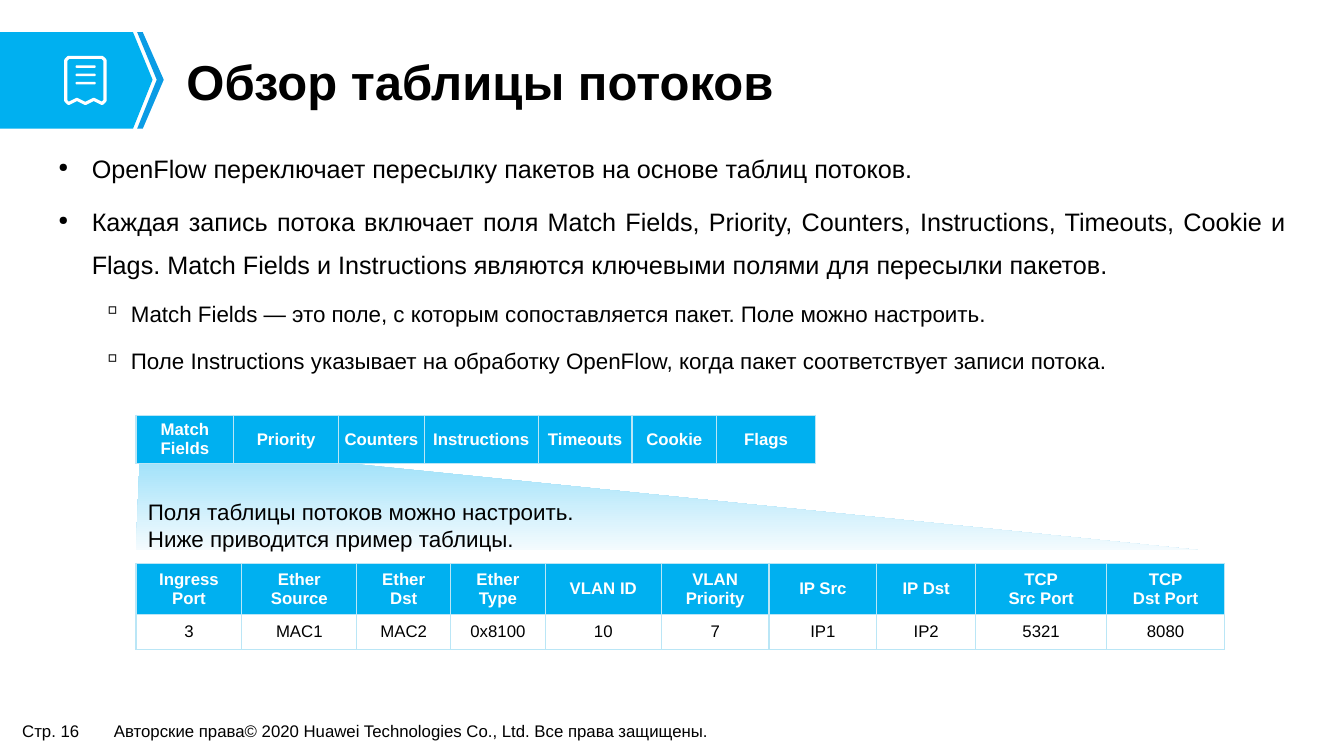
from lxml import etree
from pptx import Presentation
from pptx.dml.color import RGBColor
from pptx.enum.shapes import MSO_SHAPE
from pptx.enum.text import MSO_ANCHOR, PP_ALIGN
from pptx.oxml import parse_xml
from pptx.oxml.ns import qn
from pptx.util import Pt

CENTER, JUSTIFY, LEFT = PP_ALIGN.CENTER, PP_ALIGN.JUSTIFY, PP_ALIGN.LEFT
MIDDLE = MSO_ANCHOR.MIDDLE
ROUNDED = MSO_SHAPE.ROUNDED_RECTANGLE
BLUE, WHITE, BLACK, BORDER = "00B0F0", "FFFFFF", "000000", "BAE6F6"
NS = "http://schemas.openxmlformats.org/drawingml/2006/main"


def rgb(color):
    return RGBColor.from_string(color)


def write(tf, text, size=12, color=BLACK, bold=False, align=LEFT, line=None,
          before=0, bullet=None, bullet_size=100, indent=(0, 0), level=0):
    """Fill the first empty paragraph, or append; newlines split paragraphs."""
    for part in text.split("\n"):
        p = tf.paragraphs[0] if not tf.text else tf.add_paragraph()
        p.alignment, p.level = align, level
        p.space_before = Pt(before)
        if line:
            p.line_spacing = line
        if bullet:
            pPr = p._p.get_or_add_pPr()
            pPr.set("marL", str(Pt(indent[0])))
            pPr.set("indent", str(Pt(indent[1])))
            etree.SubElement(pPr, qn("a:buSzPct")).set("val", str(bullet_size * 1000))
            etree.SubElement(pPr, qn("a:buChar")).set("char", bullet)
        r = p.add_run()
        r.text = part
        r.font.name, r.font.size, r.font.bold = "Arial", Pt(size), bold
        r.font.color.rgb = rgb(color)


prs = Presentation()
prs.slide_width, prs.slide_height = Pt(960), Pt(540)
s = prs.slides.add_slide(prs.slide_layouts[5])

# Header arrow, receipt icon and the wedge between the two tables
arrow = [(0, 23), (95, 23), (108.7, 57.4), (95, 91.6), (0, 91.6)]
chevron = [(97.9, 23), (102.2, 23), (116.6, 57.4), (102.2, 91.6), (97.9, 91.6), (112.3, 57.4)]
receipt = [(47.2, 43), (49.2, 40.8), (72.8, 40.8), (74.8, 43), (74.8, 72.2), (73, 74),
           (67, 71), (61, 74), (55, 71), (49, 74), (47.2, 72.2)]
wedge = [(97.2, 393.1), (100.1, 324), (170.6, 322.6), (856.8, 393.1)]
for points, fill, outline in [(arrow, BLUE, None), (chevron, "0B9CE5", None),
                              (receipt, None, WHITE), (wedge, ("99DFF9", "F4FBFE"), None)]:
    builder = s.shapes.build_freeform(*points[0], scale=12700)
    builder.add_line_segments(points[1:], close=True)
    sp = builder.convert_to_shape()
    sp.shadow.inherit = False
    if isinstance(fill, tuple):
        sp.fill.gradient()
        sp.fill.gradient_angle = 270
        for stop, position, color in zip(sp.fill.gradient_stops, (0, 1), fill):
            stop.position, stop.color.rgb = position, rgb(color)
    elif fill:
        sp.fill.solid()
        sp.fill.fore_color.rgb = rgb(fill)
    else:
        sp.fill.background()
    if outline:
        sp.line.color.rgb, sp.line.width = rgb(outline), Pt(2.2)
    else:
        sp.line.fill.background()

for i in range(3):
    sp = s.shapes.add_shape(ROUNDED, Pt(54), Pt(46.7 + 5.9 * i), Pt(14.4), Pt(1.8))
    sp.adjustments[0] = 0.5
    sp.shadow.inherit = False
    sp.fill.solid()
    sp.fill.fore_color.rgb = rgb(WHITE)
    sp.line.fill.background()

# Tables: top, column widths, row heights, horizontal and vertical cell margins, rows
example = (402.5, [75.6, 82.1, 67, 67.7, 82.8, 77, 77, 70.6, 93.6, 84.2], [36.2, 25], 7.2, 3.6, [
    ["Ingress Port", "Ether Source", "Ether\nDst", "Ether\nType", "VLAN ID", "VLAN Priority",
     "IP Src", "IP Dst", "TCP\nSrc Port", "TCP\nDst Port"],
    ["3", "MAC1", "MAC2", "0x8100", "10", "7", "IP1", "IP2", "5321", "8080"]])
entry = (296.6, [69.8, 74.9, 61.2, 81.4, 67, 60.5, 70.6], [34.6], 2.9, 2.9, [
    ["Match Fields", "Priority", "Counters", "Instructions", "Timeouts", "Cookie", "Flags"]])
for top, widths, heights, margin_x, margin_y, rows in (example, entry):
    table = s.shapes.add_table(len(rows), len(widths), Pt(97.2), Pt(top),
                               Pt(sum(widths)), Pt(sum(heights))).table
    table.horz_banding = False
    for column, width in zip(table.columns, widths):
        column.width = Pt(width)
    for i, (height, row) in enumerate(zip(heights, rows)):
        table.rows[i].height = Pt(height)
        for j, text in enumerate(row):
            cell = table.cell(i, j)
            cell.vertical_anchor = MIDDLE
            cell.margin_left = cell.margin_right = Pt(margin_x)
            cell.margin_top = cell.margin_bottom = Pt(margin_y)
            for side in ("lnL", "lnR", "lnT", "lnB"):
                cell._tc.get_or_add_tcPr().append(parse_xml(
                    f'<a:{side} xmlns:a="{NS}" w="12700"><a:solidFill>'
                    f'<a:srgbClr val="{BORDER}"/></a:solidFill></a:{side}>'))
            cell.fill.solid()
            cell.fill.fore_color.rgb = rgb(WHITE if i else BLUE)
            write(cell.text_frame, text, color=BLACK if i else WHITE, bold=i == 0, align=CENTER)

# Text boxes: position, margins, wrapping, then paragraphs with their format
top_level = dict(size=18, align=JUSTIFY, line=1.4, bullet="●", bullet_size=50, indent=(23.8, -23.8))
sub_level = dict(size=16, line=1.4, before=7.2, bullet="▫", indent=(51.8, -20.2), level=1)
boxes = [
    ((9.4, 511.9, 55.4, 20.9), 6.5, 2.9, False, [("Стр. 16", {})]),
    ((74.9, 511.9, 457.9, 20.9), 6.5, 2.9, True, [
        ("Авторские права© 2020 Huawei Technologies Co., Ltd. Все права защищены.", {})]),
    ((98.6, 352.1, 334.8, 46.1), 7.2, 3.6, True, [
        ("Поля таблицы потоков можно настроить. Ниже приводится пример таблицы.", dict(size=16))]),
    ((35.3, 97.9, 889.9, 368.6), 6.5, 2.9, True, [
        ("OpenFlow переключает пересылку пакетов на основе таблиц потоков.", top_level),
        ("Каждая запись потока включает поля Match Fields, Priority, Counters, Instructions, "
         "Timeouts, Cookie и Flags. Match Fields и Instructions являются ключевыми полями "
         "для пересылки пакетов.", dict(top_level, before=7.9)),
        ("Match Fields — это поле, с которым сопоставляется пакет. Поле можно настроить.",
         sub_level),
        ("Поле Instructions указывает на обработку OpenFlow, когда пакет соответствует "
         "записи потока.", sub_level)]),
]
for place, margin_x, margin_y, wrap, paragraphs in boxes:
    tf = s.shapes.add_textbox(*map(Pt, place)).text_frame
    tf.word_wrap = wrap
    tf.margin_left = tf.margin_right = Pt(margin_x)
    tf.margin_top = tf.margin_bottom = Pt(margin_y)
    for text, fmt in paragraphs:
        write(tf, text, **fmt)

title = s.shapes.title
title.left, title.top, title.width, title.height = Pt(125.3), Pt(35.3), Pt(774), Pt(50.4)
tf = title.text_frame
tf.vertical_anchor = MIDDLE
tf.margin_left = tf.margin_right = Pt(7.9)
tf.margin_top = tf.margin_bottom = Pt(4.3)
write(tf, "Обзор таблицы потоков", size=35, bold=True, line=0.9)

prs.save("out.pptx")
